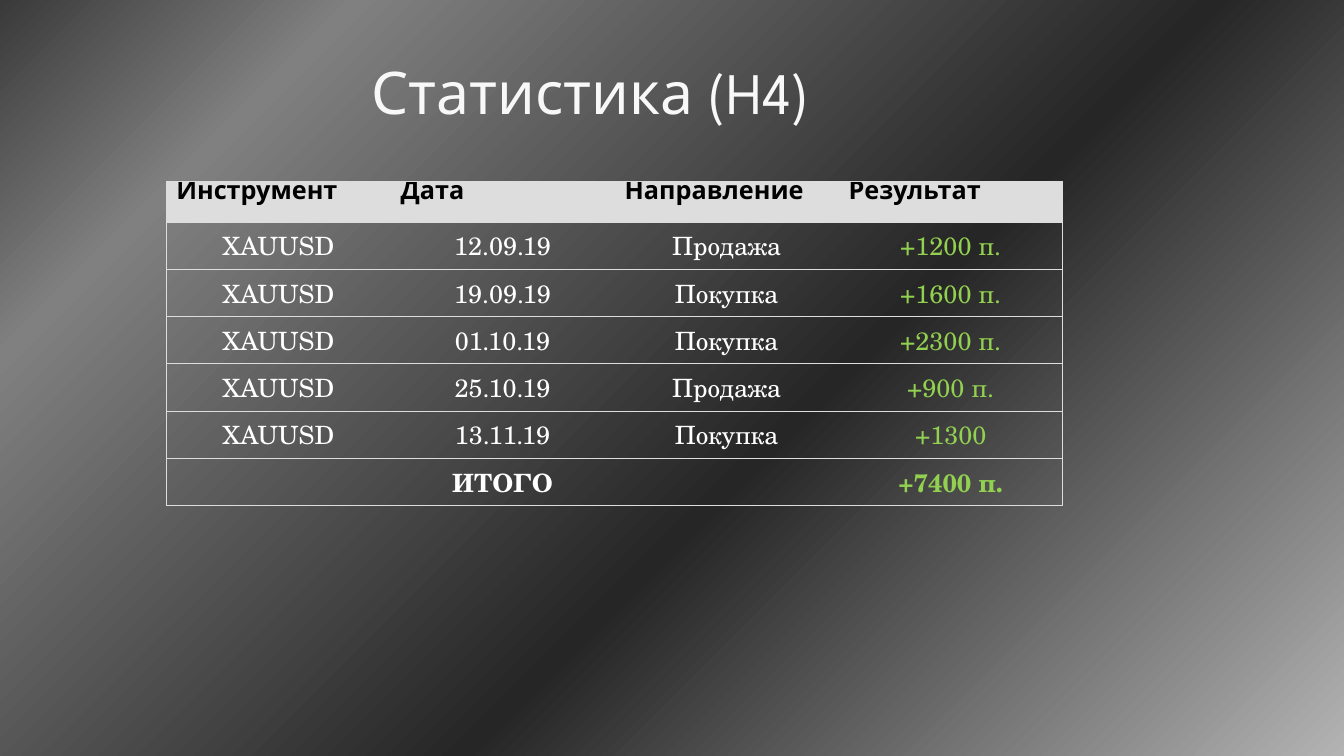
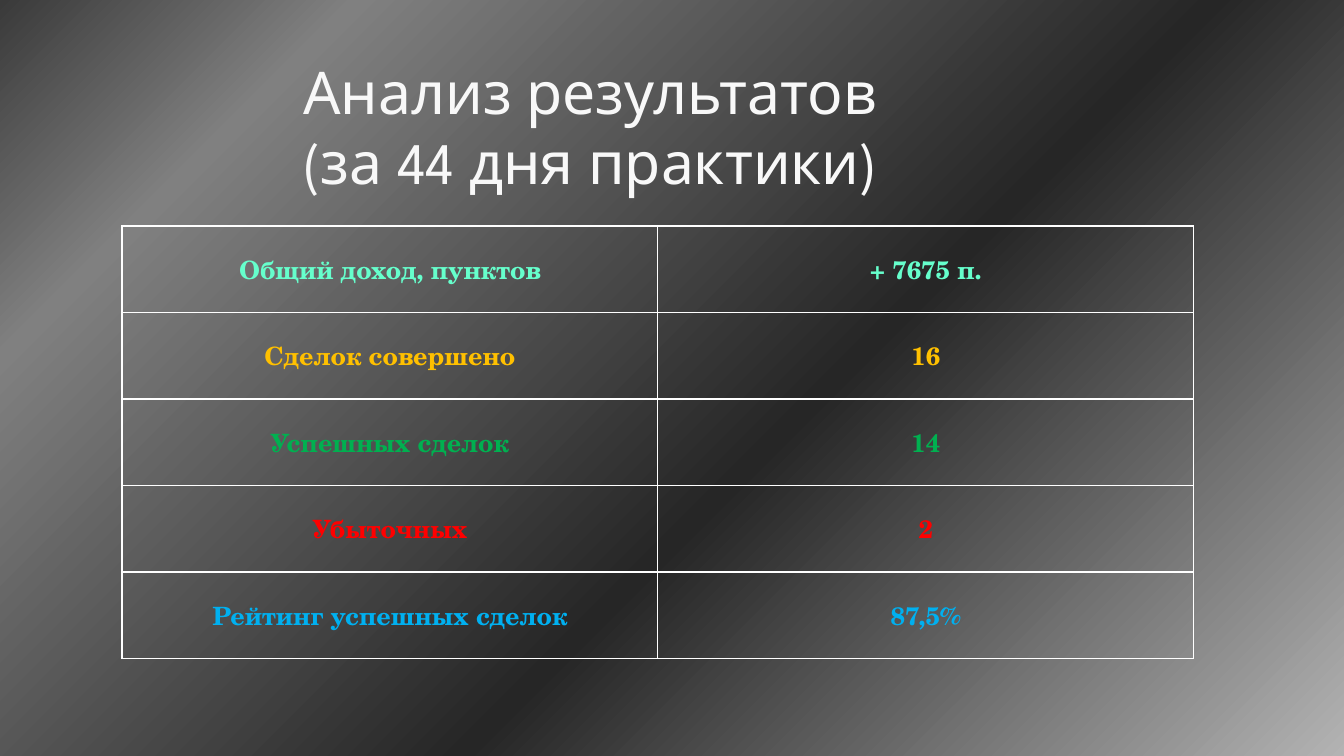
from lxml import etree
from pptx import Presentation
from pptx.dml.color import RGBColor
from pptx.enum.text import MSO_ANCHOR, MSO_AUTO_SIZE, PP_ALIGN
from pptx.oxml.ns import qn
from pptx.util import Inches, Pt

TOP, MID = MSO_ANCHOR.TOP, MSO_ANCHOR.MIDDLE
LEFT, MIDST = PP_ALIGN.LEFT, PP_ALIGN.CENTER
FIXED = MSO_AUTO_SIZE.NONE


class Theme:
    sans, serif = "League Spartan", "TeX Gyre Schola"
    head, body = Pt(42), Pt(18)
    title, white, black, rule = "F8F8F8", "FFFFFF", "000000", "DDDDDD"
    gain, mint, gold = "92D050", "66FFCC", "FFC000"
    green, red, blue = "00B050", "FF0000", "00B0F0"
    stops = [(0, "B3B3B3"), (42, "262626"), (83, "808080"), (100, "3A3A3A")]


deck = Presentation()
deck.slide_width, deck.slide_height = Inches(13.33), Inches(7.5)
PCT_W, PCT_H = deck.slide_width / 100, deck.slide_height / 100


def write(frame, text, color, align, **look):
    """Put one styled paragraph in a text frame."""
    frame.text = text
    par = frame.paragraphs[0]
    par.alignment, par.line_spacing = align, 1.0
    for run in par.runs:
        for key, val in look.items():
            setattr(run.font, key, val)
        run.font.color.rgb = RGBColor.from_string(color)


def edge(cell, sides, color, width):
    """Draw the named sides of a cell and clear its other sides."""
    props = cell._tc.get_or_add_tcPr()
    for spot, side in enumerate("LRTB"):
        line = etree.Element(qn("a:ln" + side), w=str(Pt(width)))
        if side in sides:
            fill = etree.SubElement(line, qn("a:solidFill"))
            etree.SubElement(fill, qn("a:srgbClr"), val=color)
        else:
            etree.SubElement(line, qn("a:noFill"))
        props.insert(spot, line)


# Shared background: gradient spreading from the lower right corner
master = deck.slide_master
master.background.fill.gradient()
grad = master.element.find(".//" + qn("a:gradFill"))
for part in list(grad):
    grad.remove(part)
stops = etree.SubElement(grad, qn("a:gsLst"))
for pos, color in Theme.stops:
    stop = etree.SubElement(stops, qn("a:gs"), pos=str(pos * 1000))
    etree.SubElement(stop, qn("a:srgbClr"), val=color)
ring = etree.SubElement(grad, qn("a:path"), path="circle")
etree.SubElement(ring, qn("a:fillToRect"), l="100000", t="100000")

trades = [
    ("12.09.19", "Продажа", "+1200 п."),
    ("19.09.19", "Покупка", "+1600 п."),
    ("01.10.19", "Покупка", "+2300 п."),
    ("25.10.19", "Продажа", "+900 п."),
    ("13.11.19", "Покупка", "+1300"),
]
results = [
    ("Общий доход, пунктов", "+ 7675 п.", Theme.mint),
    ("Сделок совершено", "16", Theme.gold),
    ("Успешных сделок", "14", Theme.green),
    ("Убыточных", "2", Theme.red),
    ("Рейтинг успешных сделок", "87,5%", Theme.blue),
]

# Places and row heights are percentages of the slide
pages = [
    dict(
        title="Статистика (H4)",
        place=(12.38, 24, 66.69), tall=[5.4] + [6.25] * 6,
        rows=[("Инструмент", "Дата", "Направление", "Результат")]
        + [("XAUUSD", *trade) for trade in trades]
        + [("ИТОГО", "", "", "+7400 п.")],
        colors=[[Theme.black] * 4] + [[Theme.white] * 3 + [Theme.gain]] * 6,
        bold=(0, 6), header=True, inner=False, line=(Theme.rule, 0.75),
    ),
    dict(
        title="Анализ результатов\v(за 44 дня практики)",
        place=(9.08, 29.9, 79.74), tall=[11.44] * 5,
        rows=[row[:2] for row in results],
        colors=[[row[2]] * 2 for row in results],
        bold=range(5), header=False, inner=True, line=(Theme.white, 1),
    ),
]

for page in pages:
    slide = deck.slides.add_slide(deck.slide_layouts[5])
    title = slide.shapes.title
    box = dict(left=5.33 * PCT_W, top=6.67 * PCT_H,
               width=77.2 * PCT_W, height=20.4 * PCT_H)
    for key, val in box.items():
        setattr(title, key, int(val))
    frame = title.text_frame
    frame.auto_size, frame.vertical_anchor = FIXED, TOP
    write(frame, page["title"], Theme.title, MIDST,
          name=Theme.sans, size=Theme.head)

    rows, tall = page["rows"], page["tall"]
    last = len(rows[0]) - 1
    left, top, wide = page["place"]
    table = slide.shapes.add_table(
        len(rows), last + 1, int(left * PCT_W), int(top * PCT_H),
        int(wide * PCT_W), int(sum(tall) * PCT_H)).table
    table.first_row = table.horz_banding = False

    for r, row in enumerate(rows):
        table.rows[r].height = int(tall[r] * PCT_H)
        header = page["header"] and r == 0
        for c, text in enumerate(row):
            cell = table.cell(r, c)
            cell.margin_top = cell.margin_bottom = 0
            cell.vertical_anchor = TOP if header else MID
            write(cell.text_frame, text, page["colors"][r][c],
                  LEFT if header else MIDST, size=Theme.body,
                  name=Theme.sans if header else Theme.serif,
                  bold=r in page["bold"])
            if header:
                cell.fill.solid()
                cell.fill.fore_color.rgb = RGBColor.from_string(Theme.rule)
            else:
                cell.fill.background()
            sides = "TB"
            if page["inner"] or c == 0:
                sides += "L"
            if page["inner"] or c == last:
                sides += "R"
            edge(cell, sides, *page["line"])

    if page["header"]:
        total = len(rows) - 1
        table.cell(total, 0).merge(table.cell(total, last - 1))

deck.save("out.pptx")
